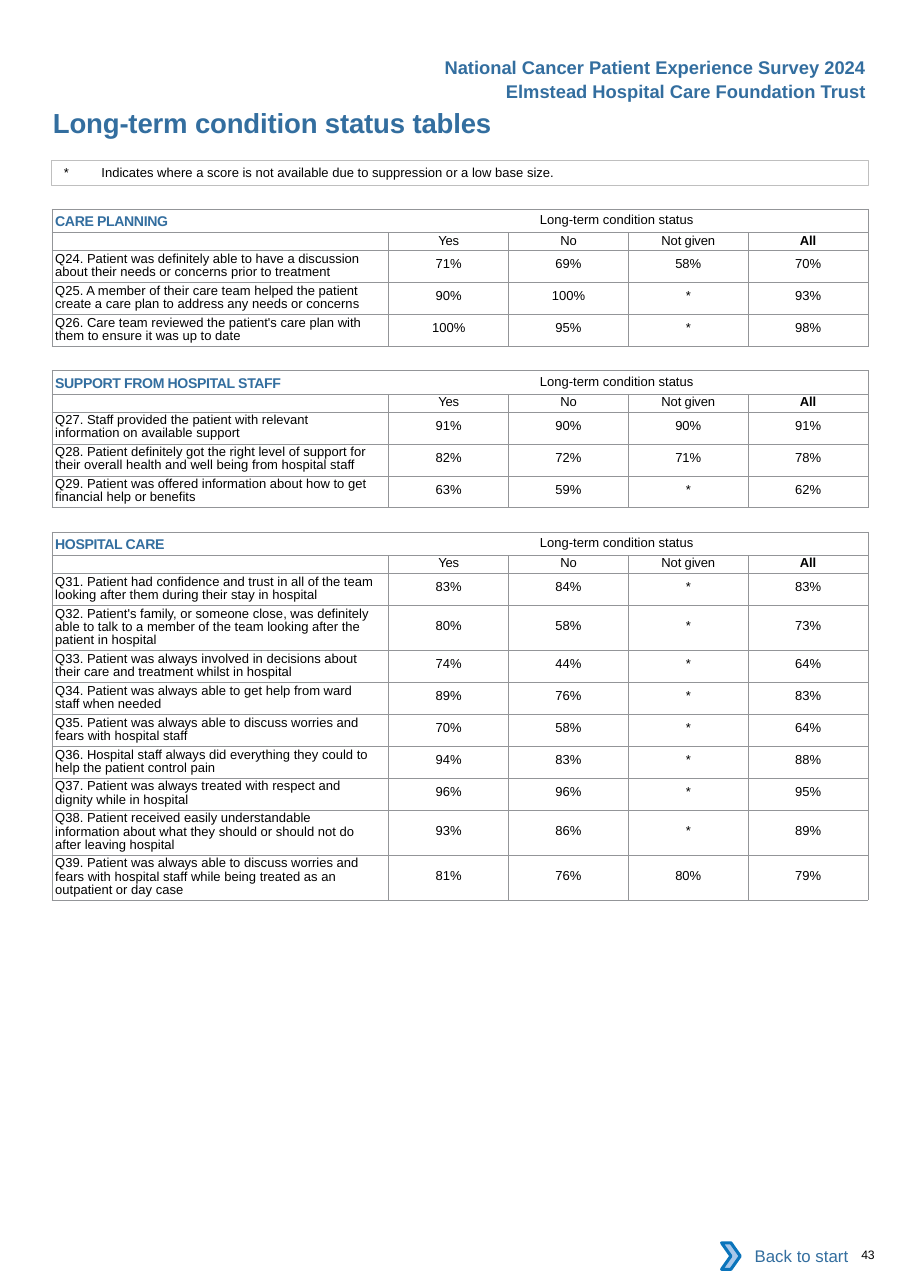
from lxml.etree import SubElement
from pptx import Presentation
from pptx.dml.color import RGBColor
from pptx.enum.shapes import MSO_SHAPE
from pptx.enum.text import MSO_ANCHOR, PP_ALIGN
from pptx.oxml.ns import qn
from pptx.util import Pt

BLUE = RGBColor(0x33, 0x6E, 0x9F)
BLACK = RGBColor(0, 0, 0)
WHITE = RGBColor(0xFF, 0xFF, 0xFF)
NOTE_LINE = RGBColor(0xBF, 0xBF, 0xBF)
GRID = RGBColor(0x93, 0x95, 0x98)
CHEVRON_FILL = RGBColor(0xA8, 0xC7, 0xE9)
CHEVRON_LINE = RGBColor(0x0A, 0x74, 0xBB)

LEFT, WIDTH = 33.9, 533.4
QUESTION_WIDTH, SCORE_WIDTH = 220.2, 78.3
HEADING_HEIGHT, GROUPS_HEIGHT = 15.3, 11.6
ROW_HEIGHTS = {2: 20.9, 3: 29.4}
SCORE_INSETS = {2: 4.2, 3: 8.6}
SECTION_GAP = 15.9
GROUPS = ["Yes", "No", "Not given", "All"]

# Each question: wording, number of lines, then its scores by group
SECTIONS = [
    ("CARE PLANNING", [
        ("Q24. Patient was definitely able to have a discussion about their needs or concerns prior to treatment", 2, "71% 69% 58% 70%"),
        ("Q25. A member of their care team helped the patient create a care plan to address any needs or concerns", 2, "90% 100% * 93%"),
        ("Q26. Care team reviewed the patient's care plan with them to ensure it was up to date", 2, "100% 95% * 98%"),
    ]),
    ("SUPPORT FROM HOSPITAL STAFF", [
        ("Q27. Staff provided the patient with relevant information on available support", 2, "91% 90% 90% 91%"),
        ("Q28. Patient definitely got the right level of support for their overall health and well being from hospital staff", 2, "82% 72% 71% 78%"),
        ("Q29. Patient was offered information about how to get financial help or benefits", 2, "63% 59% * 62%"),
    ]),
    ("HOSPITAL CARE", [
        ("Q31. Patient had confidence and trust in all of the team looking after them during their stay in hospital", 2, "83% 84% * 83%"),
        ("Q32. Patient's family, or someone close, was definitely able to talk to a member of the team looking after the patient in hospital", 3, "80% 58% * 73%"),
        ("Q33. Patient was always involved in decisions about their care and treatment whilst in hospital", 2, "74% 44% * 64%"),
        ("Q34. Patient was always able to get help from ward staff when needed", 2, "89% 76% * 83%"),
        ("Q35. Patient was always able to discuss worries and fears with hospital staff", 2, "70% 58% * 64%"),
        ("Q36. Hospital staff always did everything they could to help the patient control pain", 2, "94% 83% * 88%"),
        ("Q37. Patient was always treated with respect and dignity while in hospital", 2, "96% 96% * 95%"),
        ("Q38. Patient received easily understandable information about what they should or should not do after leaving hospital", 3, "93% 86% * 89%"),
        ("Q39. Patient was always able to discuss worries and fears with hospital staff while being treated as an outpatient or day case", 3, "81% 76% 80% 79%"),
    ]),
]


def write(frame, text, size=8.5, color=BLACK, bold=False, align=None,
          line=None, tab=None, spacing=0, baseline=0):
    """Append a formatted run to the first paragraph of a text frame."""
    paragraph = frame.paragraphs[0]
    if align is not None:
        paragraph.alignment = align
    if line:
        paragraph.line_spacing = Pt(line)
    if tab:
        tabs = SubElement(paragraph._p.get_or_add_pPr(), qn("a:tabLst"))
        SubElement(tabs, qn("a:tab"), pos=str(Pt(tab)), algn="l")
    run = paragraph.add_run()
    run.text = text
    run.font.name = "Arial"
    run.font.size = Pt(size)
    run.font.bold = bold
    run.font.color.rgb = color
    properties = run.font._element
    if spacing:
        properties.set("spc", str(round(spacing * 100)))
    if baseline:
        properties.set("baseline", str(baseline * 1000))


def set_up_cell(cell):
    """Clear the insets and fill, and draw the four borders."""
    cell.margin_left = cell.margin_top = cell.margin_right = cell.margin_bottom = 0
    properties = cell._tc.get_or_add_tcPr()
    for side in ("lnL", "lnR", "lnT", "lnB"):
        border = SubElement(properties, qn(f"a:{side}"), w=str(Pt(0.5)))
        fill = SubElement(border, qn("a:solidFill"))
        SubElement(fill, qn("a:srgbClr"), val=str(GRID))
    cell.fill.background()
    SubElement(cell.text_frame.paragraphs[0]._p, qn("a:endParaRPr"), sz="850")


deck = Presentation()
deck.slide_width, deck.slide_height = Pt(594.72), Pt(841.68)
slide = deck.slides.add_slide(deck.slide_layouts[6])
shapes = slide.shapes

# Page heading
for text, left, top, width in [
    ("National Cancer Patient Experience Survey 2024", 282.2, 33.1, 290.9),
    ("Elmstead Hospital Care Foundation Trust", 282.2, 49, 290.9),
]:
    survey_line = shapes.add_textbox(Pt(left), Pt(top), Pt(width), Pt(21.6)).text_frame
    survey_line.word_wrap = True
    write(survey_line, text, size=12, color=BLUE, bold=True, align=PP_ALIGN.RIGHT)

for text, left, top, width, height, style in [
    ("Long-term condition status tables", 34.6, 69.1, 324, 21.6,
     dict(size=18, color=BLUE, bold=True, spacing=-0.1)),
    ("43", 563, 815.4, 29.5, 9.7, dict(size=8, spacing=-0.2)),
]:
    label = shapes.add_textbox(Pt(left), Pt(top), Pt(width), Pt(height)).text_frame
    label.margin_left = label.margin_top = label.margin_right = label.margin_bottom = 0
    label.word_wrap = True
    write(label, text, **style)

# Suppression note
note = shapes.add_shape(MSO_SHAPE.RECTANGLE, Pt(LEFT), Pt(104.9), Pt(WIDTH), Pt(16.1))
note.shadow.inherit = False
note.fill.background()
note.line.color.rgb = NOTE_LINE
note.line.width = Pt(0.5)
note_text = note.text_frame
note_text.margin_left, note_text.margin_right = Pt(7.9), 0
note_text.margin_top = note_text.margin_bottom = Pt(2.9)
note_text.vertical_anchor = MSO_ANCHOR.TOP
write(note_text, "*\tIndicates where a score is not available due to suppression or a low base size.",
      align=PP_ALIGN.LEFT, tab=24.5)

# Score tables
section_top = 136.8
for section, questions in SECTIONS:
    heights = [HEADING_HEIGHT, GROUPS_HEIGHT]
    heights += [ROW_HEIGHTS[lines] for _, lines, _ in questions]
    table = shapes.add_table(len(heights), 1 + len(GROUPS), Pt(LEFT), Pt(section_top),
                             Pt(WIDTH), Pt(sum(heights))).table
    table.first_row = table.horz_banding = False
    for column in table.columns:
        column.width = Pt(SCORE_WIDTH)
    table.columns[0].width = Pt(QUESTION_WIDTH)
    for row, height in zip(table.rows, heights):
        row.height = Pt(height)
    for cell in table.iter_cells():
        set_up_cell(cell)

    heading = table.cell(0, 0)
    heading.merge(table.cell(0, len(GROUPS)))
    heading.vertical_anchor = MSO_ANCHOR.MIDDLE
    heading.margin_left = Pt(2.2)
    write(heading.text_frame, section + "\t", size=15.8, color=BLUE, bold=True,
          line=11.8, tab=316.8, spacing=-0.2, baseline=-8)
    write(heading.text_frame, "Long-term condition status")

    for column, group in enumerate(GROUPS, 1):
        write(table.cell(1, column).text_frame, group, bold=group == "All",
              align=PP_ALIGN.CENTER, line=9.9, spacing=-0.1)

    for row, (question, lines, scores) in enumerate(questions, 2):
        wording = table.cell(row, 0)
        wording.margin_left, wording.margin_top, wording.margin_right = Pt(2.2), Pt(1.6), Pt(9.5)
        write(wording.text_frame, question, line=8.6)
        for column, score in enumerate(scores.split(), 1):
            score_cell = table.cell(row, column)
            score_cell.margin_top = Pt(SCORE_INSETS[lines])
            write(score_cell.text_frame, score, align=PP_ALIGN.CENTER)
    section_top += sum(heights) + SECTION_GAP

# Back to start button
button = shapes.add_group_shape().shapes
back = button.add_shape(MSO_SHAPE.RECTANGLE, Pt(476.6), Pt(805.7), Pt(85), Pt(30.2))
back.shadow.inherit = False
back.fill.solid()
back.fill.fore_color.rgb = WHITE
back.line.fill.background()
back.text_frame.vertical_anchor = MSO_ANCHOR.MIDDLE
write(back.text_frame, "Back to start", size=11, color=BLUE, align=PP_ALIGN.RIGHT)

chevron = button.add_shape(MSO_SHAPE.CHEVRON, Pt(471.6), Pt(812.2), Pt(12.2), Pt(17.3))
chevron.shadow.inherit = False
chevron.fill.solid()
chevron.fill.fore_color.rgb = CHEVRON_FILL
chevron.line.color.rgb = CHEVRON_LINE
chevron.line.width = Pt(2)

deck.save("out.pptx")
